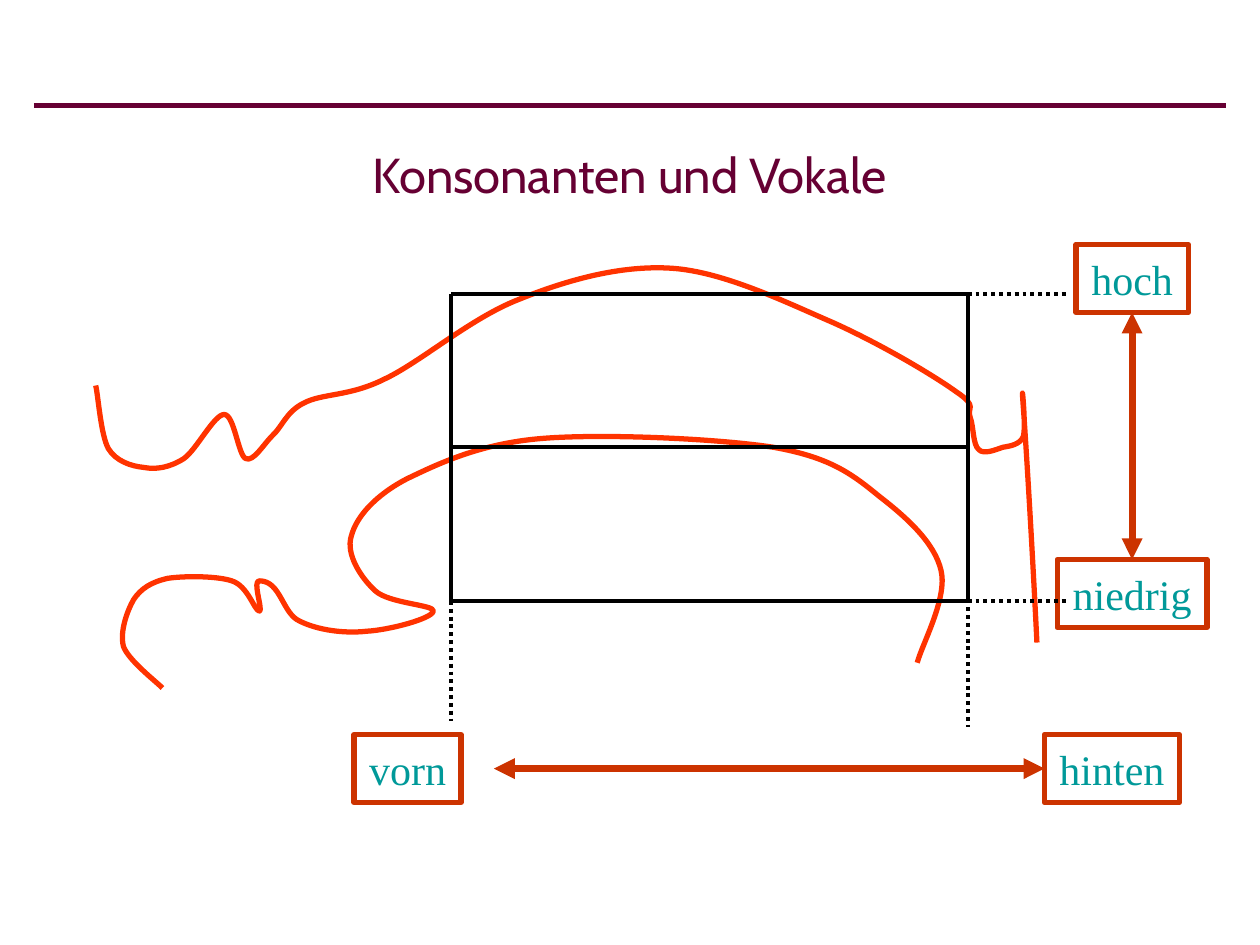
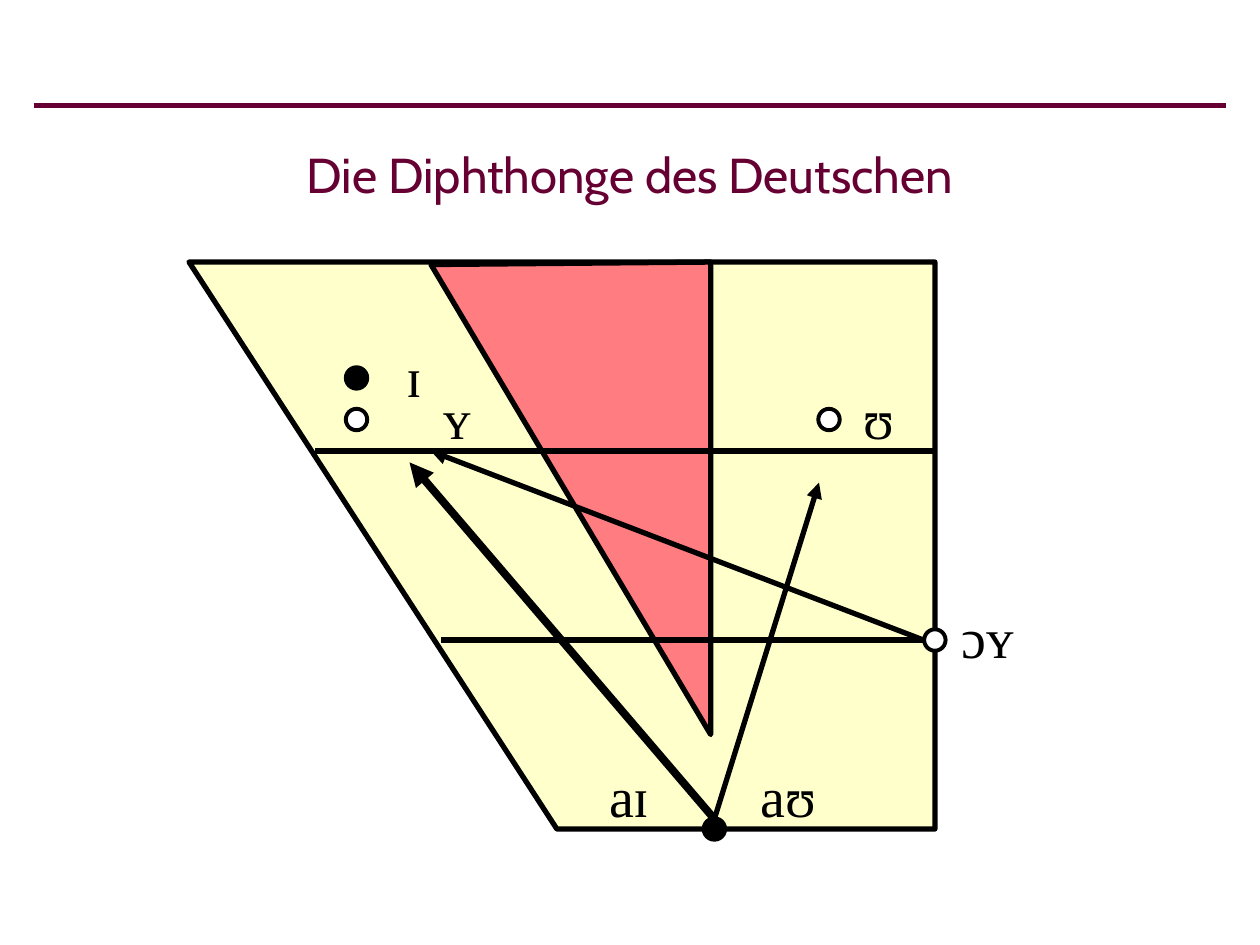
from dataclasses import dataclass

from lxml import etree
from pptx import Presentation
from pptx import util as u
from pptx.dml import color
from pptx.enum import dml, shapes, text
from pptx.oxml import ns

PX = u.Inches(1) // 100
TITLE_FONT, BODY_FONT = "Cabin", "Times New Roman"
PLUM, TEAL, RUST, RED = "660033", "009999", "CC3300", "FF3300"
BLACK, WHITE, CREAM, SALMON = "000000", "FFFFFF", "FFFFCC", "FF7C80"

Point = tuple[int, int]


@dataclass
class Label:
    words: str
    left: int
    top: int
    width: int
    height: int
    size: int
    colour: str = BLACK
    font: str = BODY_FONT
    border: str = ""
    wrap: bool = False


@dataclass
class Line:
    begin: Point
    end: Point
    colour: str = BLACK
    width: float = 3
    dotted: bool = False
    head: bool = False
    tail: bool = False


@dataclass
class Outline:
    points: list[Point]
    colour: str = BLACK
    fill: str = ""
    curved: bool = False


@dataclass
class Vowel:
    centre: Point
    rounded: bool


def rgb(value: str) -> color.RGBColor:
    return color.RGBColor.from_string(value)


def paint(shape, fill: str, border: str, width: float = 3) -> None:
    """Set fill and border, where an empty colour means none."""
    shape.shadow.inherit = False
    if fill:
        shape.fill.solid()
        shape.fill.fore_color.rgb = rgb(fill)
    else:
        shape.fill.background()
    if border:
        shape.line.color.rgb = rgb(border)
        shape.line.width = u.Pt(width)
    else:
        shape.line.fill.background()


def add_label(slide, label: Label):
    bounds = [side * PX for side in (label.left, label.top, label.width, label.height)]
    if label.border:
        shape = slide.shapes.add_shape(shapes.MSO_SHAPE.RECTANGLE, *bounds)
        paint(shape, "", label.border)
    else:
        shape = slide.shapes.add_textbox(*bounds)
    frame = shape.text_frame
    frame.word_wrap = label.wrap
    frame.auto_size = text.MSO_AUTO_SIZE.NONE
    frame.vertical_anchor = text.MSO_ANCHOR.MIDDLE
    paragraph = frame.paragraphs[0]
    paragraph.alignment = text.PP_ALIGN.CENTER
    run = paragraph.add_run()
    run.text = label.words
    run.font.size = u.Pt(label.size)
    run.font.name = label.font
    run.font.color.rgb = rgb(label.colour)
    return shape


def add_line(slide, line: Line):
    connector = slide.shapes.add_connector(
        shapes.MSO_CONNECTOR.STRAIGHT,
        *(value * PX for value in (*line.begin, *line.end)),
    )
    connector.line.color.rgb = rgb(line.colour)
    connector.line.width = u.Pt(line.width)
    if line.dotted:
        connector.line.dash_style = dml.MSO_LINE.ROUND_DOT
    properties = connector._element.spPr
    stroke = properties.find(ns.qn("a:ln"))
    for shown, tag in ((line.head, "a:headEnd"), (line.tail, "a:tailEnd")):
        if shown:
            etree.SubElement(stroke, ns.qn(tag), type="triangle")
    etree.SubElement(properties, ns.qn("a:effectLst"))
    return connector


def add_outline(slide, outline: Outline) -> None:
    """Draw a closed polygon, or an open curve through Bézier points."""
    start, *others = outline.points
    builder = slide.shapes.build_freeform(*start, scale=PX)
    builder.add_line_segments(others, close=not outline.curved)
    shape = builder.convert_to_shape()
    paint(shape, outline.fill, outline.colour)
    if outline.curved:
        segments = iter(list(shape._element.iter(ns.qn("a:lnTo"))))
        for first, second, third in zip(segments, segments, segments):
            first.tag = ns.qn("a:cubicBezTo")
            for segment in (second, third):
                first.append(segment[0])
                segment.getparent().remove(segment)


def add_vowel(slide, vowel: Vowel) -> None:
    size = 17 * PX
    left, top = (value * PX - size // 2 for value in vowel.centre)
    shape = slide.shapes.add_shape(shapes.MSO_SHAPE.OVAL, left, top, size, size)
    paint(shape, WHITE if vowel.rounded else BLACK, BLACK, 2.25)


def add_titled_slide(presentation, title: str):
    slide = presentation.slides.add_slide(presentation.slide_layouts[6])
    add_line(slide, Line((27, 84), (973, 84), PLUM))
    add_label(slide, Label(title, 27, 84, 945, 108, 28, PLUM, TITLE_FONT, wrap=True))
    return slide


UPPER_VOCAL_TRACT = [
    (76, 306), (78, 314), (80, 345), (86, 356),
    (92, 366), (104, 370), (114, 371), (124, 373), (135, 371), (146, 364),
    (156, 357), (170, 329), (178, 329), (186, 329), (189, 361), (195, 364),
    (201, 367), (209, 353), (216, 346), (224, 339), (227, 327), (241, 320),
    (256, 312), (277, 315), (305, 301), (333, 288), (373, 253), (411, 238),
    (448, 223), (492, 210), (534, 213), (575, 216), (624, 240), (661, 256),
    (699, 273), (741, 298), (759, 311), (777, 323), (767, 324), (770, 331),
    (773, 339), (772, 353), (777, 357), (781, 361), (790, 357), (796, 355),
    (802, 354), (809, 353), (812, 347), (815, 341), (810, 293), (812, 320),
    (814, 347), (819, 428), (823, 510),
]
TONGUE_AND_JAW = [
    (129, 546), (124, 541), (102, 524), (98, 513),
    (95, 501), (101, 485), (106, 476), (112, 467), (120, 462), (133, 459),
    (146, 457), (172, 457), (184, 461), (197, 465), (202, 485), (206, 485),
    (209, 485), (200, 460), (206, 461), (223, 461), (224, 487), (238, 493),
    (252, 500), (273, 503), (291, 501), (309, 500), (343, 491), (344, 485),
    (345, 480), (309, 479), (298, 469), (287, 459), (274, 440), (279, 425),
    (283, 410), (298, 393), (323, 380), (348, 368), (381, 352), (430, 348),
    (478, 344), (569, 348), (614, 355), (659, 363), (676, 376), (698, 394),
    (720, 411), (742, 431), (747, 453), (752, 475), (732, 511), (728, 526),
]


def build_vocal_tract(presentation) -> None:
    slide = add_titled_slide(presentation, "Konsonanten und Vokale")
    high, low, _, back = [
        add_label(slide, Label(words, left, top, width, 54, 24, TEAL, border=RUST))
        for words, left, top, width in (
            ("hoch", 854, 194, 89),
            ("niedrig", 839, 444, 119),
            ("vorn", 281, 583, 85),
            ("hinten", 829, 583, 107),
        )
    ]
    height_arrow = add_line(slide, Line((898, 248), (898, 444), RUST, 4, head=True, tail=True))
    height_arrow.begin_connect(high, 2)
    height_arrow.end_connect(low, 0)
    depth_arrow = add_line(slide, Line((392, 610), (829, 610), RUST, 4, head=True, tail=True))
    depth_arrow.end_connect(back, 1)

    for points in (UPPER_VOCAL_TRACT, TONGUE_AND_JAW):
        add_outline(slide, Outline(points, RED, curved=True))

    left, right, top, bottom = 358, 768, 233, 477
    for y in (top, (top + bottom) // 2, bottom):
        add_line(slide, Line((left, y), (right, y), width=2.25))
    for x in (left, right):
        add_line(slide, Line((x, top), (x, bottom), width=2.25))
    for y in (top, bottom):
        add_line(slide, Line((right, y), (847, y), width=2.25, dotted=True))
    for x, y in ((left, bottom), (right, bottom + 5)):
        add_line(slide, Line((x, y), (x, y + 95), width=2.25, dotted=True))


def build_diphthongs(presentation) -> None:
    slide = add_titled_slide(presentation, "Die Diphthonge des Deutschen")
    back = 742
    add_outline(slide, Outline([(150, 208), (back, 208), (back, 658), (442, 658)], fill=CREAM))
    add_outline(slide, Outline([(342, 210), (564, 583), (564, 208)], fill=SALMON))
    for left, y in ((250, 358), (350, 508)):
        add_line(slide, Line((left, y), (back, y)))
    for vowel in (
        Vowel((back, 508), True),
        Vowel((567, 658), False),
        Vowel((283, 300), False),
        Vowel((283, 333), True),
        Vowel((658, 333), True),
    ):
        add_vowel(slide, vowel)
    for words, left, top, width in (
        ("ʊ", 675, 299, 45),
        ("ɪ", 312, 266, 33),
        ("ʏ", 342, 299, 42),
        ("aɪ", 473, 599, 53),
        ("ɔʏ", 753, 473, 62),
        ("aʊ", 593, 599, 65),
    ):
        add_label(slide, Label(words, left, top, width, 64, 32))
    for begin, end, width in (
        ((567, 650), (325, 367), 4.5),
        ((733, 508), (342, 358), 3),
        ((567, 650), (650, 383), 3),
    ):
        add_line(slide, Line(begin, end, width=width, tail=True))


def main() -> None:
    presentation = Presentation()
    presentation.slide_width = 1000 * PX
    presentation.slide_height = 750 * PX
    build_vocal_tract(presentation)
    build_diphthongs(presentation)
    presentation.save("out.pptx")


if __name__ == "__main__":
    main()
